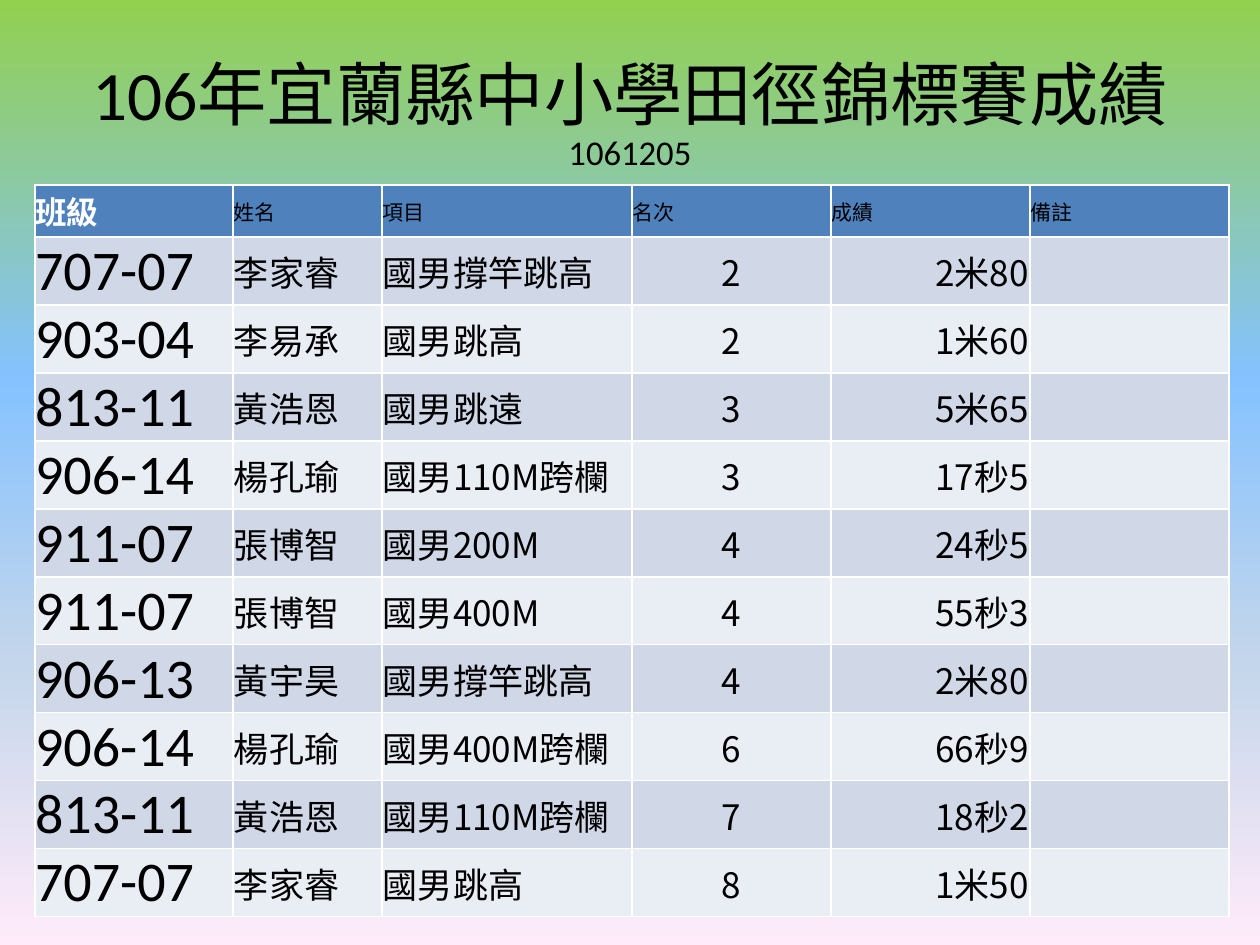
from dataclasses import dataclass

from lxml.etree import SubElement
from pptx import Presentation
from pptx.dml.color import RGBColor
from pptx.enum.text import MSO_ANCHOR, PP_ALIGN
from pptx.oxml.ns import qn
from pptx.util import Emu, Pt

TITLE = "106年宜蘭縣中小學田徑錦標賽成績"
DATE = "1061205"
HEADER = ("班級", "姓名", "項目", "名次", "成績", "備註")
RESULTS = [
    ("707-07", "李家睿", "國男撐竿跳高", "2", "2米80", ""),
    ("903-04", "李易承", "國男跳高", "2", "1米60", ""),
    ("813-11", "黃浩恩", "國男跳遠", "3", "5米65", ""),
    ("906-14", "楊孔瑜", "國男110M跨欄", "3", "17秒5", ""),
    ("911-07", "張博智", "國男200M", "4", "24秒5", ""),
    ("911-07", "張博智", "國男400M", "4", "55秒3", ""),
    ("906-13", "黃宇昊", "國男撐竿跳高", "4", "2米80", ""),
    ("906-14", "楊孔瑜", "國男400M跨欄", "6", "66秒9", ""),
    ("813-11", "黃浩恩", "國男110M跨欄", "7", "18秒2", ""),
    ("707-07", "李家睿", "國男跳高", "8", "1米50", ""),
]
LEFT, CENTER, RIGHT = PP_ALIGN.LEFT, PP_ALIGN.CENTER, PP_ALIGN.RIGHT
COLUMN_ALIGNMENTS = (LEFT, LEFT, LEFT, CENTER, RIGHT, LEFT)
COLUMN_WIDTHS = (198, 149, 250, 199, 199, 199)
HEADER_HEIGHT, ROW_HEIGHT = 52, 68
TABLE_LEFT, TABLE_TOP = 35, 185


@dataclass(frozen=True)
class Theme:
    latin: str = "Calibri"
    chinese: str = "Noto Sans CJK TC"
    text: str = "000000"
    header_text: str = "FFFFFF"
    header_fill: str = "4F81BD"
    bands: tuple = ("D0D8E8", "E9EDF4")
    background: tuple = ((0, "92D050"), (40, "85C2FF"), (70, "C4D6EB"), (100, "FFEBFA"))
    title_size: float = 39.6
    date_size: float = 19.8
    header_class_size: int = 18
    header_size: int = 12
    class_size: int = 32
    body_size: int = 20


THEME = Theme()


def px(length):
    return Emu(length * 914400 // 126)


def set_font(font, size, color, latin, bold=False):
    """Style a font, with the Chinese typeface for East Asian characters."""
    font.size = Pt(size)
    font.bold = bold
    font.color.rgb = RGBColor.from_string(color)
    font.name = latin
    properties = font._element if hasattr(font, "_element") else font._rPr
    SubElement(properties, qn("a:ea"), typeface=THEME.chinese)


def paint_background(slide):
    fill = slide.background.fill
    fill.gradient()
    fill.gradient_angle = 270
    stop_list = slide.background._cSld.find(".//" + qn("a:gsLst"))
    for stop in list(stop_list):
        stop_list.remove(stop)
    for percent, color in THEME.background:
        stop = SubElement(stop_list, qn("a:gs"), pos=str(percent * 1000))
        SubElement(stop, qn("a:srgbClr"), val=color)


def add_title(slide):
    frame = slide.shapes.add_textbox(px(63), px(38), px(1134), px(157)).text_frame
    frame.word_wrap = True
    frame.vertical_anchor = MSO_ANCHOR.MIDDLE
    paragraph = frame.paragraphs[0]
    paragraph.alignment = CENTER
    paragraph.line_spacing = 0.9
    title = paragraph.add_run()
    title.text = TITLE
    set_font(title.font, THEME.title_size, THEME.text, THEME.latin)
    paragraph.add_line_break()
    date = paragraph.add_run()
    date.text = DATE
    set_font(date.font, THEME.date_size, THEME.text, THEME.latin)


def fill_cell(cell, text, row, column):
    is_header, is_class = row == 0, column == 0
    fill = THEME.header_fill if is_header else THEME.bands[(row - 1) % 2]
    cell.fill.solid()
    cell.fill.fore_color.rgb = RGBColor.from_string(fill)
    cell.vertical_anchor = MSO_ANCHOR.MIDDLE
    inset = px(0 if is_class else 1)
    cell.margin_left = cell.margin_top = cell.margin_right = inset
    cell.margin_bottom = 0
    if not text:
        return
    cell.text = text
    paragraph = cell.text_frame.paragraphs[0]
    paragraph.alignment = LEFT if is_header else COLUMN_ALIGNMENTS[column]
    if is_header:
        size = THEME.header_class_size if is_class else THEME.header_size
    else:
        size = THEME.class_size if is_class else THEME.body_size
    highlighted = is_header and is_class
    set_font(
        paragraph.font,
        size,
        THEME.header_text if highlighted else THEME.text,
        THEME.latin if is_class else THEME.chinese,
        bold=highlighted,
    )


def add_results_table(slide):
    rows = [HEADER, *RESULTS]
    heights = [HEADER_HEIGHT] + [ROW_HEIGHT] * len(RESULTS)
    table = slide.shapes.add_table(
        len(rows), len(HEADER), px(TABLE_LEFT), px(TABLE_TOP),
        px(sum(COLUMN_WIDTHS)), px(sum(heights)),
    ).table
    for column, width in zip(table.columns, COLUMN_WIDTHS):
        column.width = px(width)
    for row, height in zip(table.rows, heights):
        row.height = px(height)
    for row_index, values in enumerate(rows):
        for column_index, text in enumerate(values):
            fill_cell(table.cell(row_index, column_index), text, row_index, column_index)


def main():
    presentation = Presentation()
    presentation.slide_width, presentation.slide_height = px(1260), px(945)
    slide = presentation.slides.add_slide(presentation.slide_layouts[6])
    paint_background(slide)
    add_title(slide)
    add_results_table(slide)
    presentation.save("out.pptx")


if __name__ == "__main__":
    main()
